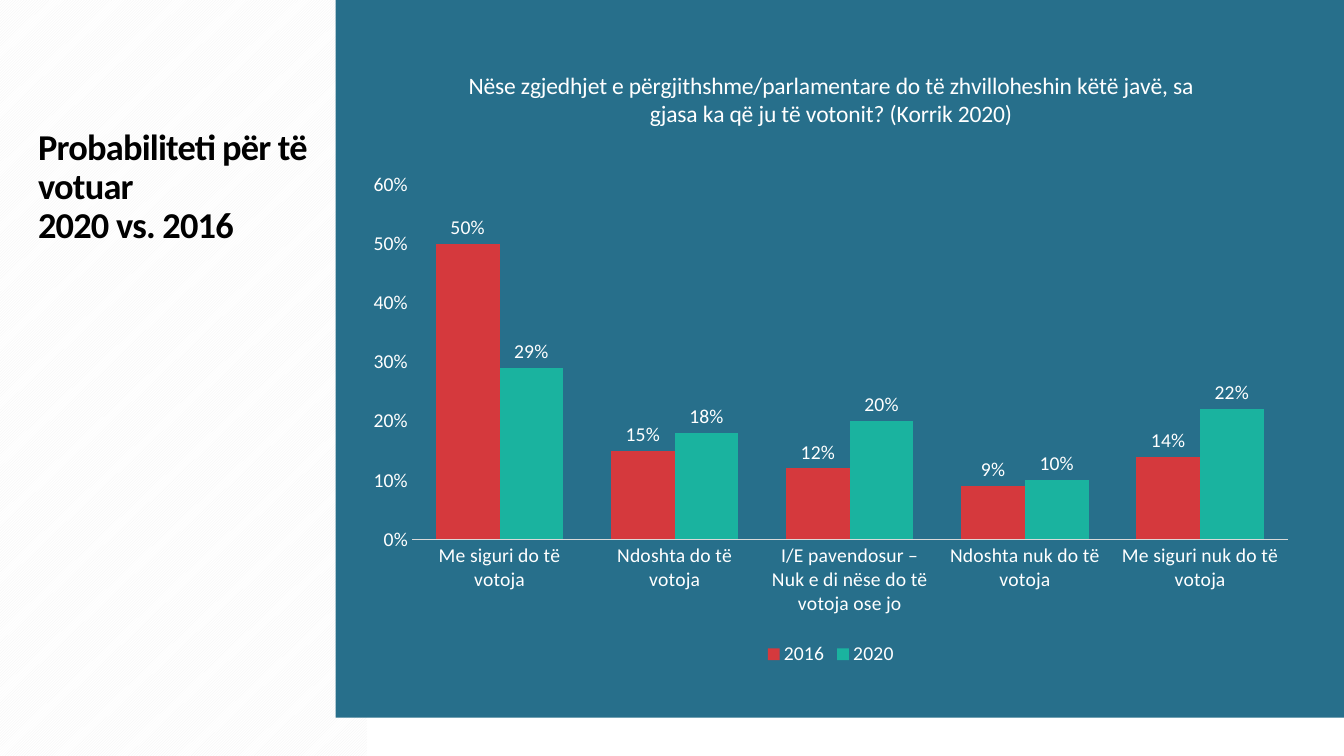
from dataclasses import dataclass
from lxml.etree import SubElement
from pptx import Presentation
from pptx.chart.chart import Chart
from pptx.chart.data import CategoryChartData
from pptx.dml.color import RGBColor
from pptx.enum.chart import (XL_CHART_TYPE, XL_LABEL_POSITION,
                             XL_LEGEND_POSITION, XL_TICK_MARK)
from pptx.enum.dml import MSO_PATTERN
from pptx.enum.shapes import MSO_SHAPE
from pptx.oxml.ns import qn
from pptx.slide import Slide
from pptx.text.text import Font
from pptx.util import Inches, Pt

HUES = {"black": "000000", "white": "FFFFFF", "stripe": "F2F2F2",
        "panel": "276F8B", "axis": "D9D9D9", "red": "D5393D",
        "green": "1AB39F"}
FACE = "Calibri"
GROUPS = ["Me siguri do të votoja", "Ndoshta do të votoja",
          "I/E pavendosur – Nuk e di nëse do të votoja ose jo",
          "Ndoshta nuk do të votoja", "Me siguri nuk do të votoja"]
HEAD = ("Nëse zgjedhjet e përgjithshme/parlamentare do të zhvilloheshin "
        "këtë javë, sa gjasa ka që ju të votonit? (Korrik 2020)")


@dataclass
class Box:
    left: float
    top: float
    width: float
    height: float

    def place(self) -> list:
        return [Inches(n) for n in
                (self.left, self.top, self.width, self.height)]


@dataclass
class Panel:
    box: Box
    hue: str
    back: str = ""


@dataclass
class Poll:
    year: str
    shares: list[float]
    hue: str


PANELS = [Panel(Box(0, 0, 3.64, 7.5), "stripe", "white"),
          Panel(Box(3.33, 0, 10, 7.12), "panel")]
POLLS = [Poll("2016", [0.5, 0.15, 0.12, 0.09, 0.14], "red"),
         Poll("2020", [0.29, 0.18, 0.2, 0.1, 0.22], "green")]


def color(name: str) -> RGBColor:
    return RGBColor.from_string(HUES[name])


def style(font: Font, size: float, hue: str, bold: bool = False) -> None:
    font.name, font.size, font.bold = FACE, Pt(size), bold
    font.color.rgb = color(hue)


def add_panel(slide: Slide, panel: Panel) -> None:
    """Draw a plain panel, or a striped one if it has a back colour."""
    shape = slide.shapes.add_shape(MSO_SHAPE.RECTANGLE, *panel.box.place())
    shape.shadow.inherit = False
    shape.line.fill.background()
    fill = shape.fill
    if panel.back:
        fill.patterned()
        fill.pattern = MSO_PATTERN.DARK_UPWARD_DIAGONAL
        fill.back_color.rgb = color(panel.back)
    else:
        fill.solid()
    fill.fore_color.rgb = color(panel.hue)


def add_title(slide: Slide, text: str, box: Box) -> None:
    frame = slide.shapes.add_textbox(*box.place()).text_frame
    frame.word_wrap = True
    para = frame.paragraphs[0]
    para.text = text
    para.line_spacing = 0.9
    for run in para.runs:
        style(run.font, 26, "black", True)
        run.font._element.set("spc", "-60")


def set_plot(chart: Chart, box: Box) -> None:
    """Fix the inner plot area, in fractions of the chart."""
    plot = chart._chartSpace.chart.plotArea
    for old in plot.findall(qn("c:layout")):
        plot.remove(old)
    layout = SubElement(plot, qn("c:layout"))
    plot.insert(0, layout)
    manual = SubElement(layout, qn("c:manualLayout"))
    for tag, value in (("layoutTarget", "inner"), ("xMode", "edge"),
                       ("yMode", "edge"), ("x", box.left), ("y", box.top),
                       ("w", box.width), ("h", box.height)):
        SubElement(manual, qn(f"c:{tag}")).set("val", str(value))


def style_axes(chart: Chart) -> None:
    for axis in (chart.category_axis, chart.value_axis):
        axis.major_tick_mark = axis.minor_tick_mark = XL_TICK_MARK.NONE
        axis.has_major_gridlines = False
        style(axis.tick_labels.font, 14, "white")
    line = chart.category_axis.format.line
    line.color.rgb, line.width = color("axis"), Pt(0.75)
    scale = chart.value_axis
    scale.format.line.fill.background()
    scale.minimum_scale, scale.maximum_scale, scale.major_unit = 0, 0.6, 0.1
    scale.tick_labels.number_format = "0%"
    scale.tick_labels.number_format_is_linked = False


def add_bars(slide: Slide, box: Box) -> None:
    data = CategoryChartData(number_format="0%")
    data.categories = GROUPS
    for poll in POLLS:
        data.add_series(poll.year, poll.shares)
    chart = slide.shapes.add_chart(
        XL_CHART_TYPE.COLUMN_CLUSTERED, *box.place(), data).chart
    style(chart.font, 14, "white")
    chart.has_title = True
    frame = chart.chart_title.text_frame
    frame.text = HEAD
    style(frame.paragraphs[0].runs[0].font, 16.8, "white")
    chart.chart_title.include_in_layout = False
    chart.has_legend = True
    chart.legend.position = XL_LEGEND_POSITION.BOTTOM
    chart.legend.include_in_layout = False
    style(chart.legend.font, 14, "white")
    style_axes(chart)
    set_plot(chart, Box(0.06, 0.22, 0.92, 0.57))

    plot = chart.plots[0]
    plot.gap_width, plot.overlap = 75, 0
    plot.vary_by_categories = False
    for bars, poll in zip(plot.series, POLLS):
        bars.format.fill.solid()
        bars.format.fill.fore_color.rgb = color(poll.hue)
        bars.invert_if_negative = False
        labels = bars.data_labels
        labels.show_value = True
        labels.position = XL_LABEL_POSITION.OUTSIDE_END
        labels.number_format = "0%"
        labels.number_format_is_linked = False
        style(labels.font, 14, "white")


def main() -> None:
    deck = Presentation()
    deck.slide_width, deck.slide_height = Inches(13.33), Inches(7.5)
    slide = deck.slides.add_slide(deck.slide_layouts[6])
    for panel in PANELS:
        add_panel(slide, panel)
    add_title(slide, "Probabiliteti për të votuar\v2020 vs. 2016",
              Box(0.28, 1.23, 3.17, 5.03))
    add_bars(slide, Box(3.52, 0.47, 9.44, 6.18))
    deck.save("out.pptx")


if __name__ == "__main__":
    main()
